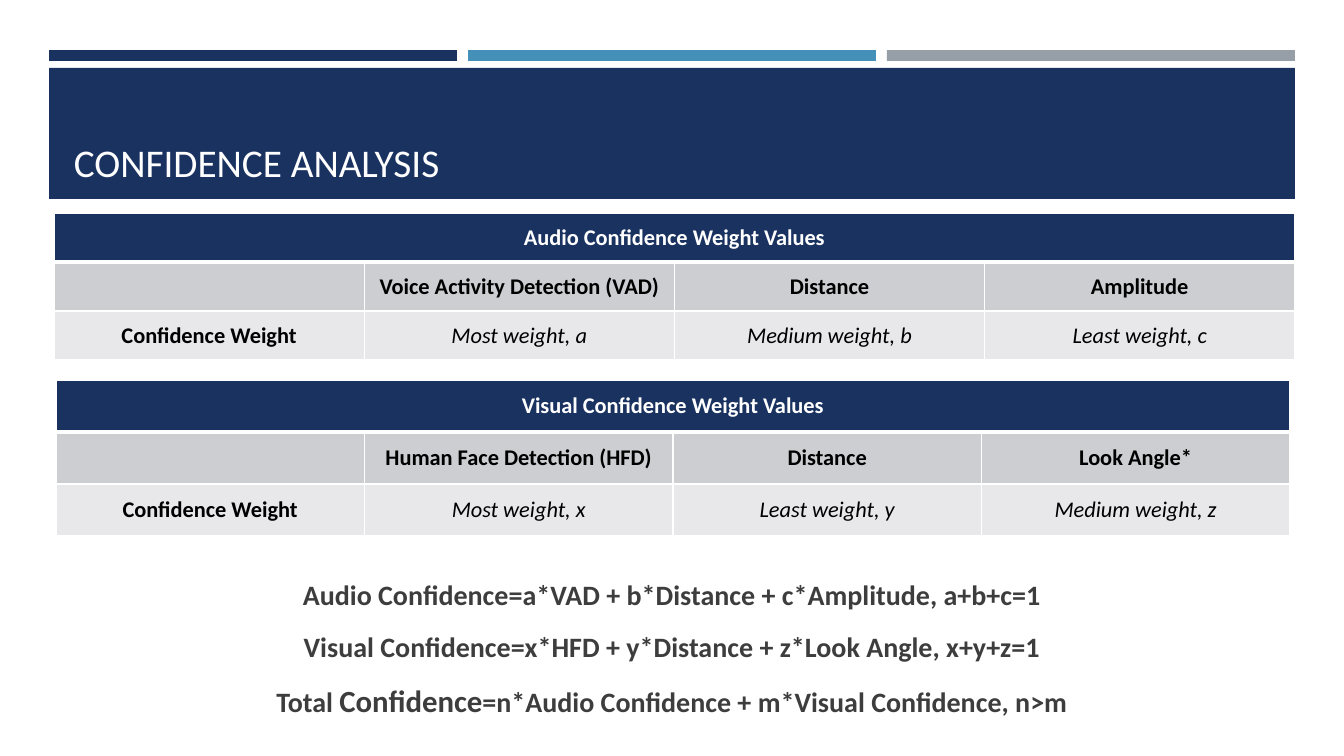
from lxml import etree
from pptx import Presentation
from pptx import util as u
from pptx.dml.color import RGBColor
from pptx.enum import shapes, text
from pptx.oxml import ns

PX = 914400 / 100.8
NAVY, BLUE, GRAY, WHITE, BLACK, INK = "1A3260", "4590B8", "969FA7", "FFFFFF", "000000", "3D3D3D"
HEADING_FILL, WEIGHT_FILL = "CDCED2", "E8E8EA"


def px(*lengths):
    return [u.Emu(round(n * PX)) for n in lengths]


def color(hex_code):
    return RGBColor.from_string(hex_code)


def add_bar(s, x, y, w, h, fill):
    bar = s.shapes.add_shape(shapes.MSO_SHAPE.RECTANGLE, *px(x, y, w, h))
    bar.shadow.inherit = False
    bar.fill.solid()
    bar.fill.fore_color.rgb = color(fill)
    bar.line.fill.background()


def add_run(p, words, size=16, fill=BLACK, bold=False, italic=False):
    r = p.add_run()
    r.text = words
    r.font.name = "Calibri"
    r.font.size = u.Pt(size)
    r.font.color.rgb = color(fill)
    r.font.bold = bold
    r.font.italic = italic


def add_text(s, x, y, w, h, runs, align=text.PP_ALIGN.CENTER,
             anchor=text.MSO_ANCHOR.TOP, **style):
    """Add a one-paragraph box; runs are (words, size) pairs."""
    tf = s.shapes.add_textbox(*px(x, y, w, h)).text_frame
    tf.word_wrap = True
    tf.vertical_anchor = anchor
    p = tf.paragraphs[0]
    p.alignment = align
    for words, size in runs:
        add_run(p, words, size, **style)


def set_borders(cell, top=1, bottom=1):
    tcPr = cell._tc.get_or_add_tcPr()
    for i, (side, width) in enumerate(zip("LRTB", (1, 1, top, bottom))):
        ln = etree.Element(ns.qn(f"a:ln{side}"), w=str(u.Pt(width)))
        fill = etree.SubElement(ln, ns.qn("a:solidFill"))
        etree.SubElement(fill, ns.qn("a:srgbClr"), val=WHITE)
        tcPr.insert(i, ln)


def add_weight_table(s, x, y, w, row_h, title, headings, weights):
    rows = [
        ([title, "", "", ""], NAVY, {"bottom": 3}),
        (["", *headings], HEADING_FILL, {"top": 3}),
        (["Confidence Weight", *weights], WEIGHT_FILL, {}),
    ]
    table = s.shapes.add_table(3, 4, *px(x, y, w, 3 * row_h)).table
    for i, (words, fill, borders) in enumerate(rows):
        for j, word in enumerate(words):
            cell = table.cell(i, j)
            cell.fill.solid()
            cell.fill.fore_color.rgb = color(fill)
            set_borders(cell, **borders)
            cell.vertical_anchor = text.MSO_ANCHOR.MIDDLE
            if word:
                is_weight = i == 2 and j > 0
                p = cell.text_frame.paragraphs[0]
                p.alignment = text.PP_ALIGN.CENTER
                add_run(p, word, fill=BLACK if i else WHITE,
                        bold=not is_weight, italic=is_weight)
    table.cell(0, 0).merge(table.cell(0, 3))


def main():
    prs = Presentation()
    prs.slide_width, prs.slide_height = px(1344, 756)
    s = prs.slides.add_slide(prs.slide_layouts[6])

    for i, fill in enumerate((NAVY, BLUE, GRAY)):
        add_bar(s, 49 + 419 * i, 50, 408, 11, fill)
    add_bar(s, 49, 68, 1246, 131, NAVY)
    add_text(s, 64, 78, 1216, 112, [("CONFIDENCE ANALYSIS", 28)], fill=WHITE,
             align=text.PP_ALIGN.LEFT, anchor=text.MSO_ANCHOR.BOTTOM)

    add_weight_table(s, 54, 213, 1241, 49, "Audio Confidence Weight Values",
                     ["Voice Activity Detection (VAD)", "Distance", "Amplitude"],
                     ["Most weight, a", "Medium weight, b", "Least weight, c"])
    add_weight_table(s, 56, 380, 1234, 52, "Visual Confidence Weight Values",
                     ["Human Face Detection (HFD)", "Distance", "Look Angle*"],
                     ["Most weight, x", "Least weight, y", "Medium weight, z"])

    formulas = [
        [("Audio Confidence=a*VAD + b*Distance + c*Amplitude, a+b+c=1", 20)],
        [("Visual Confidence=x*HFD + y*Distance + z*Look Angle, x+y+z=1", 20)],
        [("Total ", 20), ("Confidence", 22),
         ("=n*Audio Confidence + m*Visual Confidence, n>m", 20)],
    ]
    for i, runs in enumerate(formulas):
        add_text(s, 57, 573 + 52 * i, 1230, 46, runs, fill=INK, bold=True)

    prs.save("out.pptx")


if __name__ == "__main__":
    main()
